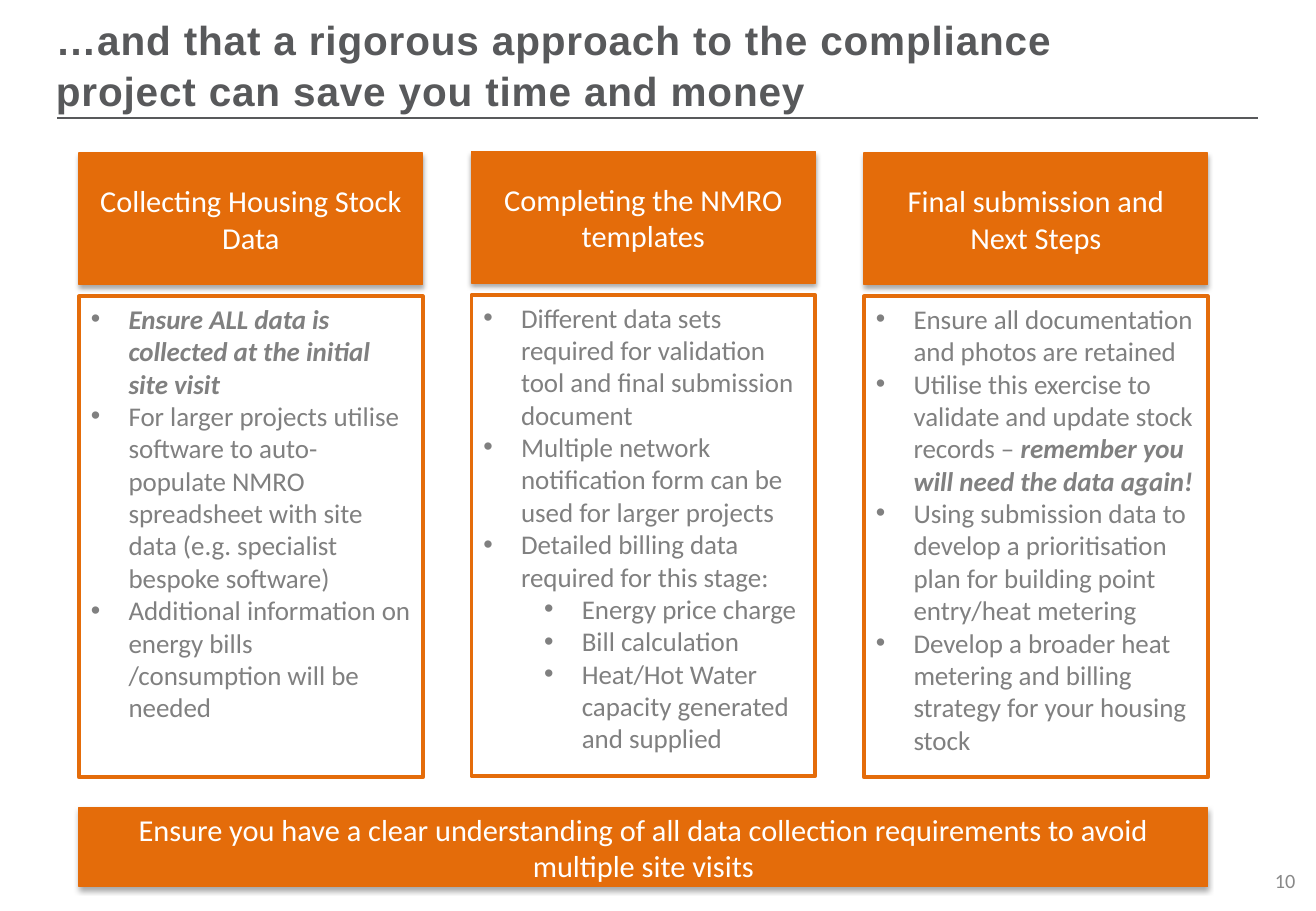
from lxml import etree
from pptx import Presentation
from pptx.dml.color import RGBColor
from pptx.enum.shapes import MSO_CONNECTOR, MSO_SHAPE
from pptx.enum.text import MSO_ANCHOR, MSO_AUTO_SIZE, PP_ALIGN
from pptx.oxml.ns import qn
from pptx.util import Inches, Pt

RECT = MSO_SHAPE.RECTANGLE
LINE = MSO_CONNECTOR.STRAIGHT
TOP, MIDDLE = MSO_ANCHOR.TOP, MSO_ANCHOR.MIDDLE
LEFT, CENTER, RIGHT = PP_ALIGN.LEFT, PP_ALIGN.CENTER, PP_ALIGN.RIGHT
TITLE_ONLY = 5

COLORS = {
    "orange": "E46C0A",
    "white": "FFFFFF",
    "title": "58595B",
    "text": "808080",
    "number": "898989",
    "shadow": "000000",
}

TITLE = "…and that a rigorous approach to the compliance project can save you time and money"
BANNER = ("Ensure you have a clear understanding of all data collection "
          "requirements to avoid multiple site visits")

# Each column: top, heading, items; an item is (level, [(text, strong), ...]).
COLUMNS = [
    (1.26, "Collecting Housing Stock Data", [
        (0, [("Ensure ALL data is collected at the initial site visit", True)]),
        (0, [("For larger projects utilise software to auto-populate NMRO "
              "spreadsheet with site data (e.g. specialist bespoke software)", False)]),
        (0, [("Additional information on energy bills /consumption will be needed", False)]),
    ]),
    (1.25, "Completing the NMRO templates", [
        (0, [("Different data sets required for validation tool and final "
              "submission document", False)]),
        (0, [("Multiple network notification form can be used for larger projects", False)]),
        (0, [("Detailed billing data required for this stage:", False)]),
        (1, [("Energy price charge", False)]),
        (1, [("Bill calculation", False)]),
        (1, [("Heat/Hot Water capacity generated and supplied", False)]),
    ]),
    (1.26, "Final submission and Next Steps", [
        (0, [("Ensure all documentation and photos are retained", False)]),
        (0, [("Utilise this exercise to validate and update stock records – ", False),
             ("remember you will need the data again!", True)]),
        (0, [("Using submission data to develop a prioritisation plan for "
              "building point entry/heat metering", False)]),
        (0, [("Develop a broader heat metering and billing strategy for your "
              "housing stock", False)]),
    ]),
]


def color(name):
    return RGBColor.from_string(COLORS[name])


def add_run(para, text, size, tint, face="Calibri", bold=False, italic=False):
    run = para.add_run()
    run.text = text
    font = run.font
    font.name, font.size = face, Pt(size)
    font.bold, font.italic = bold, italic
    font.color.rgb = color(tint)
    return run


def set_frame(shape, anchor):
    frame = shape.text_frame
    frame.word_wrap = True
    frame.auto_size = MSO_AUTO_SIZE.NONE
    frame.vertical_anchor = anchor
    return frame


def add_rect(slide, box, width):
    shape = slide.shapes.add_shape(RECT, *map(Inches, box))
    shape.shadow.inherit = False
    shape.line.color.rgb = color("orange")
    shape.line.width = Pt(width)
    return shape


def add_shadow(shape):
    effects = shape.element.spPr.find(qn("a:effectLst"))
    outer = etree.SubElement(effects, qn("a:outerShdw"), blurRad=str(Pt(3.1)),
                             dist=str(Pt(1.8)), dir="5400000", rotWithShape="0")
    tint = etree.SubElement(outer, qn("a:srgbClr"), val=COLORS["shadow"])
    etree.SubElement(tint, qn("a:alpha"), val="35000")


def add_bullet(para, level):
    para.level = level
    props = para._p.get_or_add_pPr()
    props.set("marL", str(Inches(0.31 + 0.5 * level)))
    props.set("indent", str(Inches(-0.31)))
    etree.SubElement(props, qn("a:buFont"), typeface="Arial")
    etree.SubElement(props, qn("a:buChar"), char="•")


def add_title(slide, box):
    title = slide.shapes.title
    title.left, title.top, title.width, title.height = map(Inches, box)
    para = set_frame(title, TOP).paragraphs[0]
    para.alignment = LEFT
    para.line_spacing = 1.05
    run = add_run(para, TITLE, 24, "title", "Arial", bold=True)
    run.font._element.set("spc", "50")

    x, y = box[0] + 0.11, box[1] + 0.92
    rule = slide.shapes.add_connector(
        LINE, Inches(x), Inches(y), Inches(x + 9.88), Inches(y))
    rule.line.color.rgb = color("title")
    rule.line.width = Pt(1)
    etree.SubElement(rule.element.spPr, qn("a:effectLst"))


def add_band(slide, box, text):
    """Solid orange block with centred white text."""
    band = add_rect(slide, box, 0.75)
    band.fill.solid()
    band.fill.fore_color.rgb = color("orange")
    add_shadow(band)
    para = set_frame(band, MIDDLE).paragraphs[0]
    para.alignment = CENTER
    add_run(para, text, 18, "white")


def add_list(slide, box, items):
    panel = add_rect(slide, box, 2.25)
    panel.fill.background()
    frame = set_frame(panel, TOP)
    for i, (level, runs) in enumerate(items):
        para = frame.add_paragraph() if i else frame.paragraphs[0]
        para.alignment = LEFT
        add_bullet(para, level)
        for text, strong in runs:
            add_run(para, text, 16, "text", bold=strong, italic=strong)


def add_column(slide, box, heading, items):
    x, y, w, h = box
    head, gap = 1.08, 0.1
    add_list(slide, (x, y + head + gap, w, h - head - gap), items)
    add_band(slide, (x, y, w, head), heading)


def add_number(slide, box):
    shape = slide.shapes.add_textbox(*map(Inches, box))
    para = set_frame(shape, MIDDLE).paragraphs[0]
    para.alignment = RIGHT
    add_run(para, "10", 12, "number")


def main():
    prs = Presentation()
    prs.slide_width, prs.slide_height = Inches(10.83), Inches(7.5)
    slide = prs.slides.add_slide(prs.slide_layouts[TITLE_ONLY])
    add_title(slide, (0.36, 0.05, 8.77, 0.95))
    add_number(slide, (8.23, 7.05, 2.53, 0.4))
    left, step, width = 0.65, 3.23, 2.83
    for i, (top, heading, items) in enumerate(COLUMNS):
        add_column(slide, (left + i * step, top, width, 5.14), heading, items)
    add_band(slide, (left, 6.65, 2 * step + width, 0.65), BANNER)
    prs.save("out.pptx")


if __name__ == "__main__":
    main()
